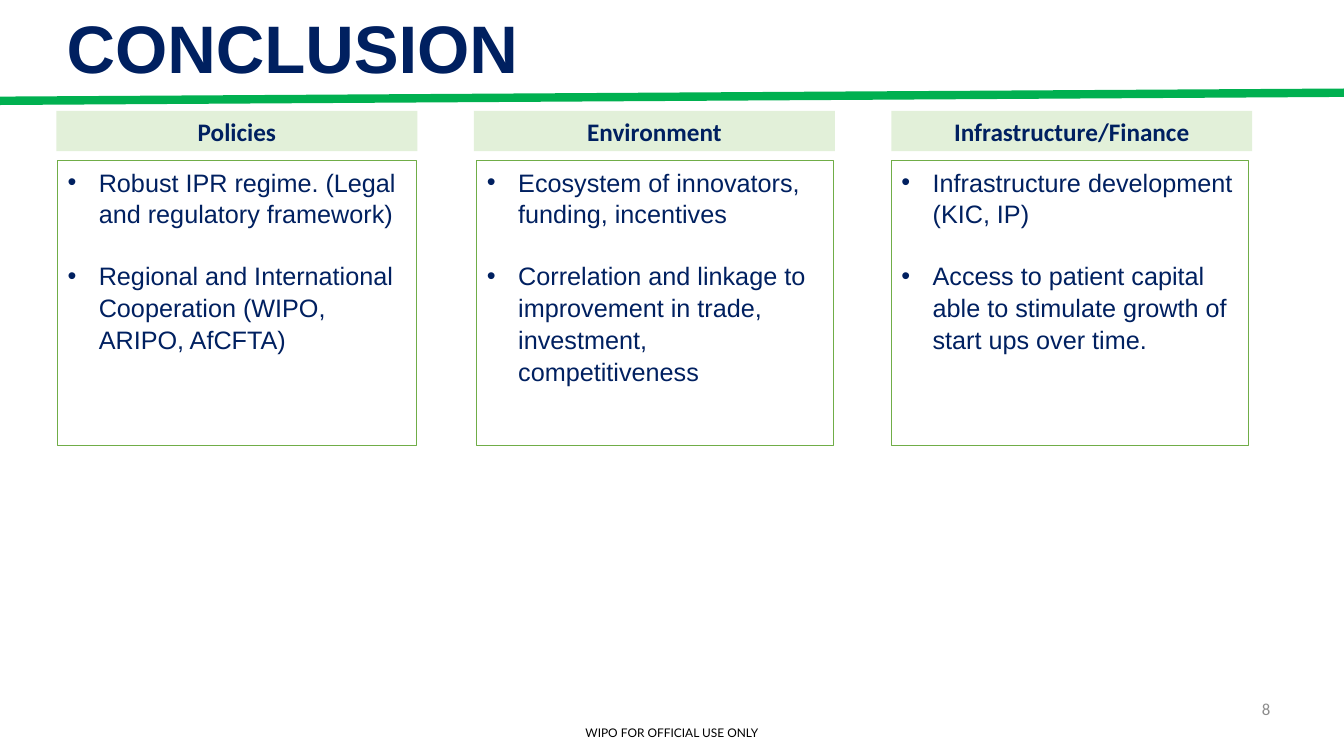
"""Build the conclusion slide with three columns of recommendations."""
from dataclasses import dataclass

from lxml import etree
from pptx import Presentation
from pptx.dml.color import RGBColor
from pptx.enum.shapes import MSO_CONNECTOR, MSO_SHAPE
from pptx.enum.text import MSO_ANCHOR, MSO_AUTO_SIZE, PP_ALIGN
from pptx.oxml.ns import qn
from pptx.util import Inches, Pt

LEFT, MID, RIGHT = PP_ALIGN.LEFT, PP_ALIGN.CENTER, PP_ALIGN.RIGHT
TOP, CENTRE = MSO_ANCHOR.TOP, MSO_ANCHOR.MIDDLE
RECT, LINE = MSO_SHAPE.RECTANGLE, MSO_CONNECTOR.STRAIGHT
FIXED = MSO_AUTO_SIZE.NONE


@dataclass(frozen=True)
class Theme:
    navy: RGBColor = RGBColor.from_string("002060")
    green: RGBColor = RGBColor.from_string("00B050")
    edge: RGBColor = RGBColor.from_string("70AD47")
    pale: RGBColor = RGBColor.from_string("E2F0D9")
    grey: RGBColor = RGBColor.from_string("8C8C8C")
    black: RGBColor = RGBColor.from_string("000000")
    title: float = 48
    body: float = 18
    page: float = 12
    note: float = 8.5


theme = Theme()


def place(shape, left, top, width, height, anchor):
    """Set the box of a shape and prepare its text frame."""
    shape.left, shape.top = Inches(left), Inches(top)
    shape.width, shape.height = Inches(width), Inches(height)
    frame = shape.text_frame
    frame.word_wrap = True
    frame.auto_size = FIXED
    frame.vertical_anchor = anchor
    return frame


def write(para, text, font, size, color, align=LEFT, bold=False):
    """Add one styled run to a paragraph."""
    para.alignment = align
    run = para.add_run()
    run.text = text
    run.font.name, run.font.size = font, Pt(size)
    run.font.bold = bold
    run.font.color.rgb = color


deck = Presentation()
deck.slide_width, deck.slide_height = Inches(13.33), Inches(7.5)
slide = deck.slides.add_slide(deck.slide_layouts.get_by_name("Comparison"))
shapes = slide.shapes

frame = place(shapes.title, 0.56, -0.11, 11.5, 1.25, CENTRE)
head = frame.paragraphs[0]
head.line_spacing = 0.9
write(head, "CONCLUSION", "Arial", theme.title, theme.navy, bold=True)

columns = [
    ("Policies", 0.57, 3.56, [
        "Robust IPR regime. (Legal and regulatory framework)",
        "Regional and International Cooperation (WIPO, ARIPO, AfCFTA)"]),
    ("Environment", 4.73, 3.54, [
        "Ecosystem of innovators, funding, incentives",
        "Correlation and linkage to improvement in trade, investment, "
        "competitiveness"]),
    ("Infrastructure/Finance", 8.84, 3.54, [
        "Infrastructure development (KIC, IP)",
        "Access to patient capital able to stimulate growth of "
        "start ups over time."]),
]
bodies = list(slide.placeholders)[1:]

for i, (name, left, width, points) in enumerate(columns):
    body = bodies[i]
    frame = place(body, left, 1.59, width, 2.83, TOP)
    body.line.color.rgb = theme.edge
    body.line.width = Pt(0.75)
    for j, point in enumerate(points):
        para = frame.add_paragraph() if j else frame.paragraphs[0]
        para.line_spacing = 1.05
        para.space_before = Pt(21.7 if j else 0)
        props = para._p.get_or_add_pPr()
        props.set("marL", str(Inches(0.31)))
        props.set("indent", str(-Inches(0.31)))
        etree.SubElement(props, qn("a:buFont")).set("typeface", "Arial")
        etree.SubElement(props, qn("a:buChar")).set("char", "•")
        write(para, point, "Arial", theme.body, theme.navy)

    label = shapes.add_shape(RECT, 0, 0, 0, 0)
    frame = place(label, 0.56 + 4.14 * i, 1.1, 3.58, 0.4, CENTRE)
    label.shadow.inherit = False
    label.fill.solid()
    label.fill.fore_color.rgb = theme.pale
    label.line.fill.background()
    write(frame.paragraphs[0], name, "Calibri", theme.body, theme.navy, MID, True)

for spare in bodies[len(columns):]:
    spare.element.getparent().remove(spare.element)

rule = shapes.add_connector(LINE, 0, Inches(1), Inches(13.33), Inches(0.92))
rule.line.color.rgb = theme.green
rule.line.width = Pt(6)
etree.SubElement(rule.element.spPr, qn("a:effectLst"))

page = shapes.add_textbox(0, 0, 0, 0)
frame = place(page, 9.7, 6.83, 3, 0.4, CENTRE)
write(frame.paragraphs[0], "8", "Calibri", theme.page, theme.grey, RIGHT)

note = shapes.add_textbox(0, 0, 0, 0)
frame = place(note, 0, 7.15, 13.33, 0.24, TOP)
write(frame.paragraphs[0], "WIPO FOR OFFICIAL USE ONLY", "Lato",
      theme.note, theme.black, MID)

deck.save("out.pptx")
